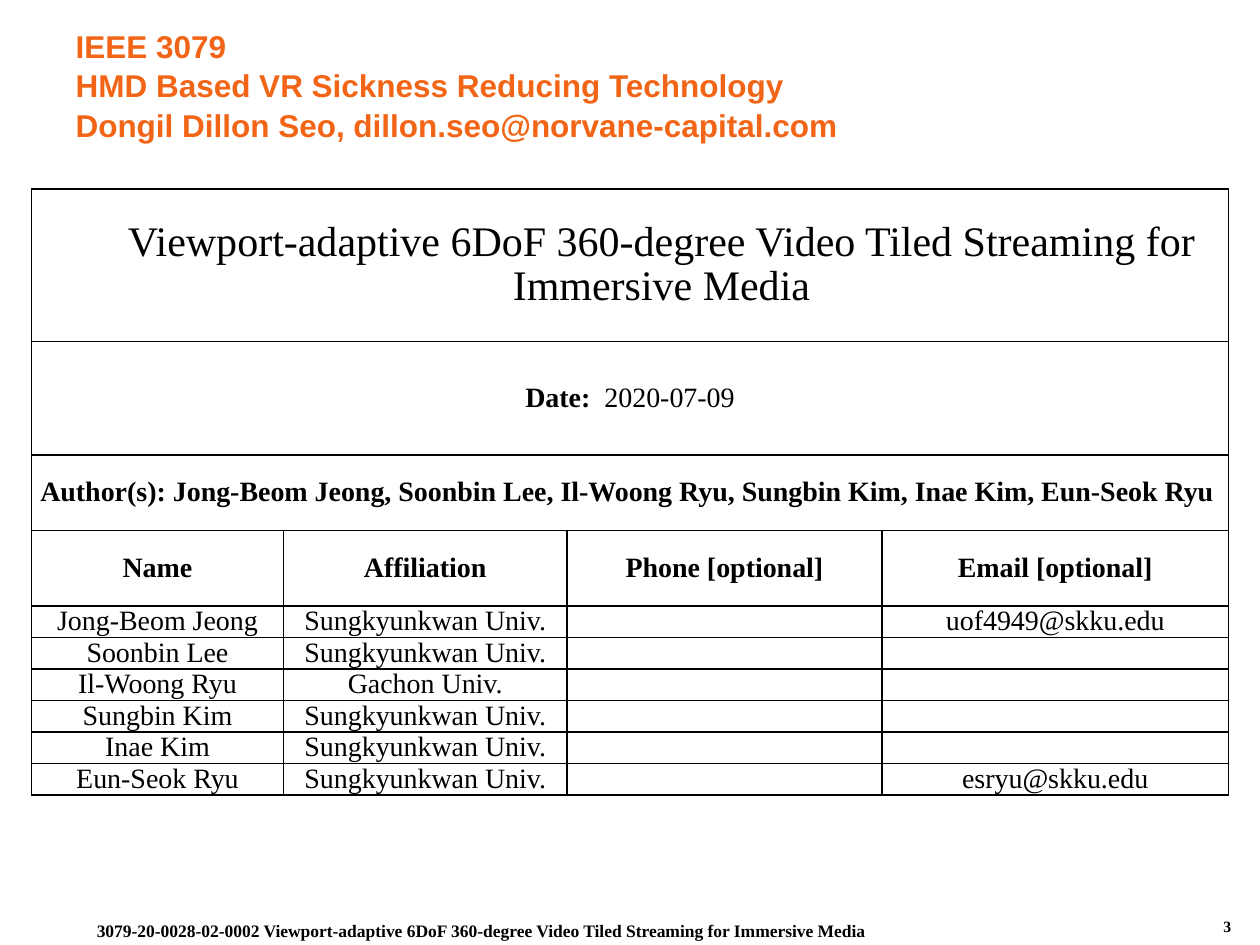
from dataclasses import dataclass

from lxml.etree import SubElement
from pptx import Presentation
from pptx.dml.color import RGBColor
from pptx.enum.text import MSO_ANCHOR, MSO_AUTO_SIZE, PP_ALIGN
from pptx.oxml.ns import qn
from pptx.util import Inches, Pt

COLORS = {"black": "000000", "orange": "F26516"}
SERIF = "Times New Roman"
COLUMNS = [2, 2.25, 2.5, 2.75]
SKKU = "Sungkyunkwan Univ."
TITLE = "Viewport-adaptive 6DoF 360-degree Video Tiled Streaming for Immersive Media"


@dataclass
class Row:
    height: float
    texts: list[str]
    size: float = 16
    bold: bool = False
    align: PP_ALIGN = PP_ALIGN.CENTER
    indent: float = 0
    after: float = 0


@dataclass
class Label:
    box: tuple[float, float, float, float]
    text: str
    size: float
    align: PP_ALIGN = PP_ALIGN.LEFT


AUTHORS = [
    ("Jong-Beom Jeong", SKKU, "uof4949@skku.edu"),
    ("Soonbin Lee", SKKU, ""),
    ("Il-Woong Ryu", "Gachon Univ.", ""),
    ("Sungbin Kim", SKKU, ""),
    ("Inae Kim", SKKU, ""),
    ("Eun-Seok Ryu", SKKU, "esryu@skku.edu"),
]
NAMES = ", ".join(name for name, _, _ in AUTHORS)
ROWS = [
    Row(1.21, [TITLE], size=24, indent=0.5, after=12),
    Row(0.9, ["Date:|  2020-07-09"], after=12),
    Row(0.6, [f"Author(s): {NAMES}"], bold=True, align=PP_ALIGN.LEFT),
    Row(0.6, ["Name", "Affiliation", "Phone [optional]", "Email [optional]"], bold=True),
] + [Row(0.25, [name, school, "", email]) for name, school, email in AUTHORS]
LABELS = [
    Label((8.25, 7.23, 1.62, 0.27), "3", 9, PP_ALIGN.RIGHT),
    Label((0.67, 7.25, 7.96, 0.25), f"3079-20-0028-02-0002 {TITLE}", 10),
]


def style(p, size: float, bold: bool, name: str = SERIF, color: str = "black") -> None:
    p.font.name, p.font.size, p.font.bold = name, Pt(size), bold
    p.font.color.rgb = RGBColor.from_string(COLORS[color])


def add_borders(cell) -> None:
    tcPr = cell._tc.get_or_add_tcPr()
    for side in ("lnL", "lnR", "lnT", "lnB"):
        ln = SubElement(tcPr, qn(f"a:{side}"), w=str(Pt(1)))
        fill = SubElement(ln, qn("a:solidFill"))
        SubElement(fill, qn("a:srgbClr"), val=COLORS["black"])


def fill_cell(cell, text: str, row: Row) -> None:
    """Write the text; a part before "|" becomes a bold lead-in."""
    cell.vertical_anchor = MSO_ANCHOR.MIDDLE
    cell.margin_left = cell.margin_right = Inches(0.07)
    cell.margin_top = cell.margin_bottom = 0
    p = cell.text_frame.paragraphs[0]
    p.alignment, p.line_spacing = row.align, 0.95
    p.space_after = Pt(row.after)
    p._p.get_or_add_pPr().set("marL", str(Inches(row.indent)))
    style(p, row.size, row.bold)
    lead, bar, rest = text.partition("|")
    if text:
        r = p.add_run()
        r.text = lead
        if bar:
            r.font.bold = True
            p.add_run().text = rest
    else:
        SubElement(p._p, qn("a:endParaRPr"), sz=str(int(row.size * 100)))


def add_author_table(s) -> None:
    height = sum(row.height for row in ROWS)
    shape = s.shapes.add_table(len(ROWS), len(COLUMNS), Inches(0.25), Inches(1.5),
                               Inches(sum(COLUMNS)), Inches(height))
    table = shape.table
    table.first_row = table.horz_banding = False
    for column, width in zip(table.columns, COLUMNS):
        column.width = Inches(width)
    for i, row in enumerate(ROWS):
        table.rows[i].height = Inches(row.height)
        for cell in table.rows[i].cells:
            add_borders(cell)
            cell.fill.background()
        if len(row.texts) == 1:
            table.cell(i, 0).merge(table.cell(i, len(COLUMNS) - 1))
        for j, text in enumerate(row.texts):
            fill_cell(table.cell(i, j), text, row)


def add_title(s) -> None:
    title = s.shapes.title
    title.left, title.top, title.width, title.height = map(Inches, (0.5, 0.17, 9, 1))
    tf = title.text_frame
    tf.auto_size = MSO_AUTO_SIZE.NONE
    tf.vertical_anchor = MSO_ANCHOR.MIDDLE
    p = tf.paragraphs[0]
    p.text = ("IEEE 3079\vHMD Based VR Sickness Reducing Technology\v"
              "Dongil Dillon Seo, dillon.seo@norvane-capital.com")
    p.alignment, p.line_spacing = PP_ALIGN.LEFT, 1.05
    style(p, 18, True, "Arial", "orange")


def add_label(s, label: Label) -> None:
    tf = s.shapes.add_textbox(*map(Inches, label.box)).text_frame
    tf.word_wrap = True
    p = tf.paragraphs[0]
    p.text, p.alignment = label.text, label.align
    style(p, label.size, True)


def main() -> None:
    prs = Presentation()
    prs.slide_width, prs.slide_height = Inches(10), Inches(7.5)
    s = prs.slides.add_slide(prs.slide_layouts[5])
    add_title(s)
    add_author_table(s)
    for label in LABELS:
        add_label(s, label)
    prs.save("out.pptx")


if __name__ == "__main__":
    main()
